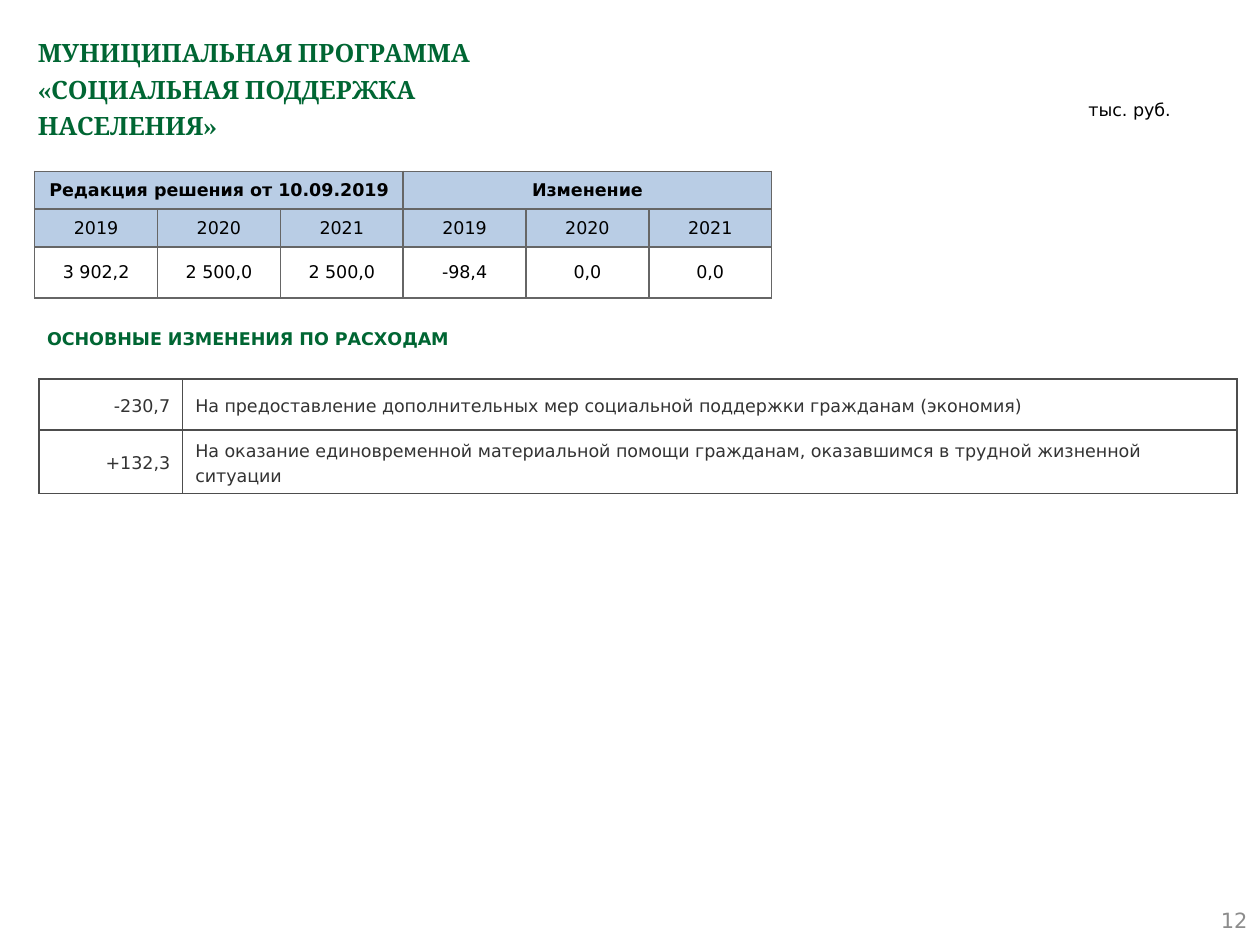
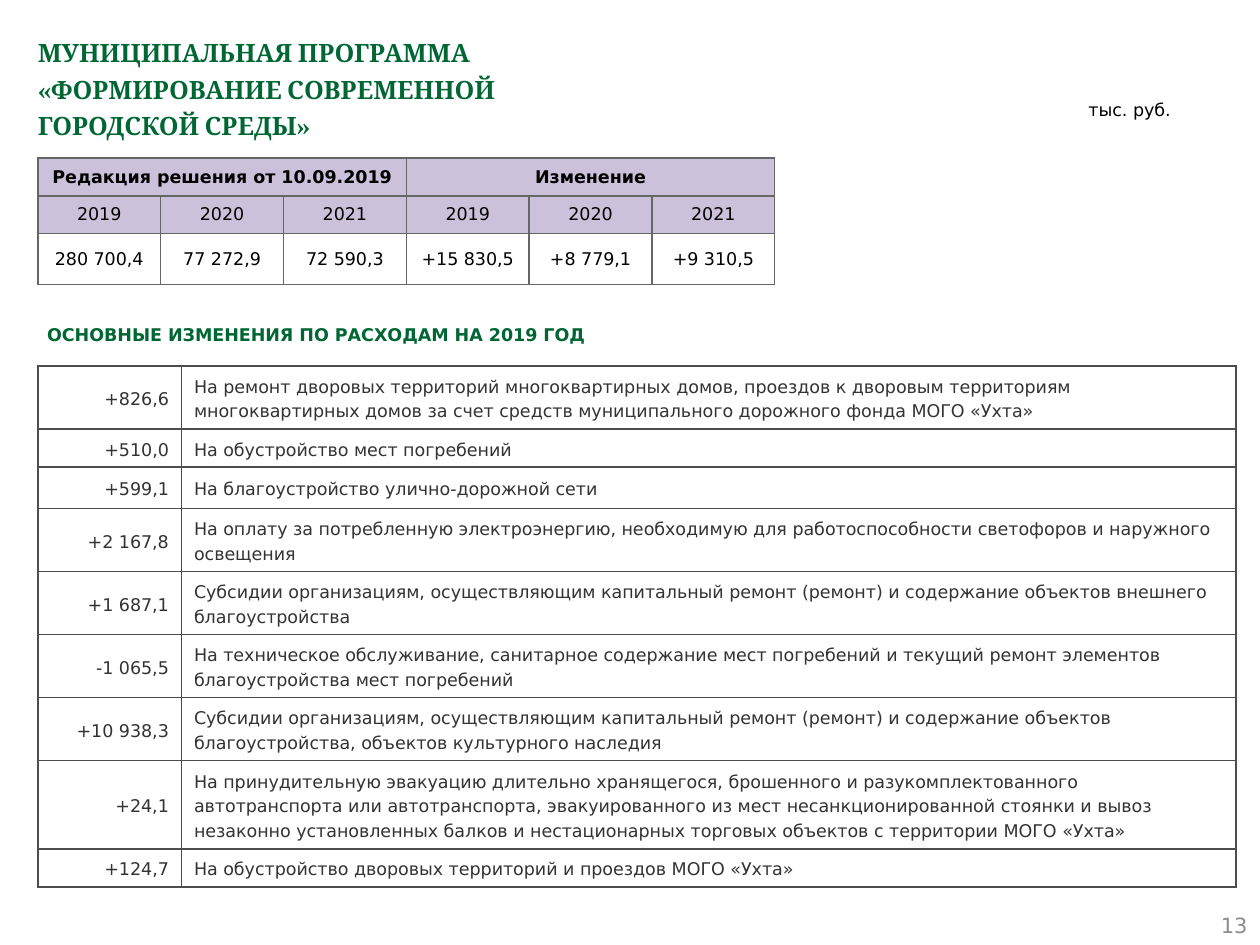
import lxml.etree
import pptx
import pptx.dml.color
import pptx.enum.shapes
import pptx.enum.text
import pptx.oxml.ns
import pptx.util

SLIDE_WIDTH = pptx.util.Inches(10)
SLIDE_HEIGHT = pptx.util.Inches(7.5)
GRID_COLUMNS = 100
GRID_ROWS = 75

ALIGN = pptx.enum.text.PP_ALIGN
ANCHOR = pptx.enum.text.MSO_ANCHOR
FIT = pptx.enum.text.MSO_AUTO_SIZE

GREEN, BLACK, TEXT_GRAY = "006633", "000000", "333333"
NUMBER_GRAY, SUMMARY_BORDER, DETAIL_BORDER = "8C8C8C", "666666", "4D4D4D"

BODY = {"name": "DejaVu Sans", "size": pptx.util.Pt(10), "bold": False}
BODY_BOLD = BODY | {"bold": True}
PAGE_NUMBER = BODY | {"size": pptx.util.Pt(12)}
TITLE = {"name": "Cambria", "size": pptx.util.Pt(14.4), "bold": True}
SPACED = {"line_spacing": 1.2, "alignment": ALIGN.LEFT}
SPACED_RIGHT = SPACED | {"alignment": ALIGN.RIGHT}
CENTERED = {"alignment": ALIGN.CENTER}
NARROW_MARGINS = {
    f"margin_{side}": pptx.util.Inches(0.05)
    for side in ("left", "right", "top", "bottom")
}

SUMMARY_HEADINGS = ("Редакция решения от 10.09.2019", "Изменение")
YEARS = ("2019", "2020", "2021")
SUMMARY_COLUMNS = [9.75] * 6
SUMMARY_ROWS = [3, 3, 4.05]
DETAIL_COLUMNS = [11.4, 83.7]

PROGRAMS = [
    {
        "title": "МУНИЦИПАЛЬНАЯ ПРОГРАММА\v«СОЦИАЛЬНАЯ ПОДДЕРЖКА\vНАСЕЛЕНИЯ»",
        "number": ("12", 71),
        "tint": "B9CDE5",
        "summary_at": (2.75, 13.6),
        "totals": ("3 902,2", "2 500,0", "2 500,0", "-98,4", "0,0", "0,0"),
        "heading": ("ОСНОВНЫЕ ИЗМЕНЕНИЯ ПО РАСХОДАМ", 24.7, 44.3),
        "details_at": (3.1, 30.1),
        "details": [
            ("-230,7", 4.05, "На предоставление дополнительных мер социальной "
             "поддержки гражданам (экономия)"),
            ("+132,3", 4.9, "На оказание единовременной материальной помощи "
             "гражданам, оказавшимся в трудной жизненной ситуации"),
        ],
    },
    {
        "title": "МУНИЦИПАЛЬНАЯ ПРОГРАММА\v«ФОРМИРОВАНИЕ СОВРЕМЕННОЙ\v"
                 "ГОРОДСКОЙ СРЕДЫ»",
        "number": ("13", 71.4),
        "tint": "CCC1DA",
        "summary_at": (3, 12.55),
        "totals": ("280 700,4", "77 272,9", "72 590,3",
                   "+15 830,5", "+8 779,1", "+9 310,5"),
        "heading": ("ОСНОВНЫЕ ИЗМЕНЕНИЯ ПО РАСХОДАМ НА 2019 ГОД", 24.4, 53.2),
        "details_at": (3, 29.05),
        "details": [
            ("+826,6", 4.9, "На ремонт дворовых территорий многоквартирных "
             "домов, проездов к дворовым территориям многоквартирных домов за "
             "счет средств муниципального дорожного фонда МОГО «Ухта»"),
            ("+510,0", 2.95, "На обустройство мест погребений"),
            ("+599,1", 3.3, "На благоустройство улично-дорожной сети"),
            ("+2 167,8", 4.9, "На оплату за потребленную электроэнергию, "
             "необходимую для работоспособности светофоров и наружного "
             "освещения"),
            ("+1 687,1", 4.9, "Субсидии организациям, осуществляющим "
             "капитальный ремонт (ремонт) и содержание объектов внешнего "
             "благоустройства"),
            ("-1 065,5", 4.9, "На техническое обслуживание, санитарное "
             "содержание мест погребений и текущий ремонт элементов "
             "благоустройства мест погребений"),
            ("+10 938,3", 4.9, "Субсидии организациям, осуществляющим "
             "капитальный ремонт (ремонт) и содержание объектов "
             "благоустройства, объектов культурного наследия"),
            ("+24,1", 6.8, "На принудительную эвакуацию длительно хранящегося, "
             "брошенного и разукомплектованного автотранспорта или "
             "автотранспорта, эвакуированного из мест несанкционированной "
             "стоянки и вывоз незаконно установленных балков и "
             "нестационарных торговых объектов с территории МОГО «Ухта»"),
            ("+124,7", 2.95, "На обустройство дворовых территорий и проездов "
             "МОГО «Ухта»"),
        ],
    },
]


def across(columns):
    """Return the length of a number of grid columns."""
    return round(SLIDE_WIDTH * columns / GRID_COLUMNS)


def down(rows):
    """Return the length of a number of grid rows."""
    return round(SLIDE_HEIGHT * rows / GRID_ROWS)


def box(left, top, width, height):
    """Return a grid rectangle as slide lengths."""
    return across(left), down(top), across(width), down(height)


def color(value):
    """Return a colour from its hex string."""
    return pptx.dml.color.RGBColor.from_string(value)


def set_values(target, values):
    """Set every attribute named in a dict of format values."""
    for name, value in values.items():
        setattr(target, name, value)


def write(text_frame, text, font, text_color, paragraph_format):
    """Fill a text frame with one formatted paragraph."""
    paragraph = text_frame.paragraphs[0]
    paragraph.text = text
    set_values(paragraph, paragraph_format)
    for run in paragraph.runs:
        set_values(run.font, font)
        run.font.color.rgb = color(text_color)


def add_title(slide, text):
    """Place and format the title placeholder."""
    title = slide.shapes.title
    position = box(2, 2, 96.1, 7.9)
    set_values(title, dict(zip(("left", "top", "width", "height"), position)))
    set_values(title.text_frame, {"vertical_anchor": ANCHOR.TOP,
                                  "auto_size": FIT.NONE, "word_wrap": True})
    write(title.text_frame, text, TITLE, GREEN, SPACED)


def add_label(slide, position, text, font, text_color, paragraph_format, anchor):
    """Add a wrapped text box."""
    text_frame = slide.shapes.add_textbox(*position).text_frame
    set_values(text_frame, {"word_wrap": True, "vertical_anchor": anchor})
    write(text_frame, text, font, text_color, paragraph_format)


def add_heading(slide, text, top, width):
    """Add the unfilled plate that heads the list of changes."""
    plate = slide.shapes.add_shape(
        pptx.enum.shapes.MSO_SHAPE.PENTAGON, *box(2.75, top, width, 4.3))
    plate.adjustments[0] = 0
    plate.shadow.inherit = False
    plate.fill.background()
    plate.line.fill.background()
    plate.text_frame.vertical_anchor = ANCHOR.MIDDLE
    write(plate.text_frame, text, BODY_BOLD, GREEN, {"alignment": ALIGN.LEFT})


def add_borders(cell, border_color):
    """Draw one-point lines on the four sides of a cell."""
    properties = cell._tc.get_or_add_tcPr()
    qualified = pptx.oxml.ns.qn
    for index, side in enumerate("LRTB"):
        line = lxml.etree.Element(
            qualified(f"a:ln{side}"), w=str(pptx.util.Pt(1)))
        fill = lxml.etree.SubElement(line, qualified("a:solidFill"))
        lxml.etree.SubElement(fill, qualified("a:srgbClr"), val=border_color)
        properties.insert(index, line)


def add_grid_table(slide, position, columns, rows, border_color):
    """Add an unfilled, bordered table with given column and row sizes."""
    table = slide.shapes.add_table(
        len(rows), len(columns),
        *box(*position, sum(columns), sum(rows))).table
    set_values(table, {"first_row": False, "horz_banding": False})
    for column, width in zip(table.columns, columns):
        column.width = across(width)
    for row, height in zip(table.rows, rows):
        row.height = down(height)
    for cell in table.iter_cells():
        cell.vertical_anchor = ANCHOR.MIDDLE
        cell.fill.background()
        add_borders(cell, border_color)
    return table


def add_summary(slide, position, totals, tint):
    """Add the table of yearly totals under two merged headings."""
    table = add_grid_table(slide, position, SUMMARY_COLUMNS, SUMMARY_ROWS,
                           SUMMARY_BORDER)
    for cell in table.iter_cells():
        set_values(cell, NARROW_MARGINS)
    for index, heading in enumerate(SUMMARY_HEADINGS):
        first = index * len(YEARS)
        cell = table.cell(0, first)
        cell.merge(table.cell(0, first + len(YEARS) - 1))
        write(cell.text_frame, heading, BODY_BOLD, BLACK, CENTERED)
    for row, values in enumerate((YEARS * len(SUMMARY_HEADINGS), totals), 1):
        for column, value in enumerate(values):
            write(table.cell(row, column).text_frame, value, BODY, BLACK,
                  CENTERED)
    for row in range(2):
        for column in range(len(SUMMARY_COLUMNS)):
            fill = table.cell(row, column).fill
            fill.solid()
            fill.fore_color.rgb = color(tint)


def add_details(slide, position, details):
    """Add the table of amounts and their purposes."""
    heights = [height for _, height, _ in details]
    table = add_grid_table(slide, position, DETAIL_COLUMNS, heights,
                           DETAIL_BORDER)
    for row, (amount, _, purpose) in enumerate(details):
        write(table.cell(row, 0).text_frame, amount, BODY, TEXT_GRAY,
              SPACED_RIGHT)
        write(table.cell(row, 1).text_frame, purpose, BODY, TEXT_GRAY, SPACED)


def add_program(presentation, program):
    """Add the slide of one municipal program."""
    slide = presentation.slides.add_slide(presentation.slide_layouts[5])
    add_title(slide, program["title"])
    number, number_top = program["number"]
    add_label(slide, box(76.7, number_top, 23.3, 4), number, PAGE_NUMBER,
              NUMBER_GRAY, {"alignment": ALIGN.RIGHT}, ANCHOR.MIDDLE)
    add_heading(slide, *program["heading"])
    add_details(slide, program["details_at"], program["details"])
    add_label(slide, box(85.4, 7, 10.1, 3), "тыс. руб.", BODY, BLACK, SPACED,
              ANCHOR.TOP)
    add_summary(slide, program["summary_at"], program["totals"],
                program["tint"])


def main():
    """Build and save the presentation."""
    presentation = pptx.Presentation()
    set_values(presentation, {"slide_width": SLIDE_WIDTH,
                              "slide_height": SLIDE_HEIGHT})
    for program in PROGRAMS:
        add_program(presentation, program)
    presentation.save("out.pptx")


if __name__ == "__main__":
    main()
